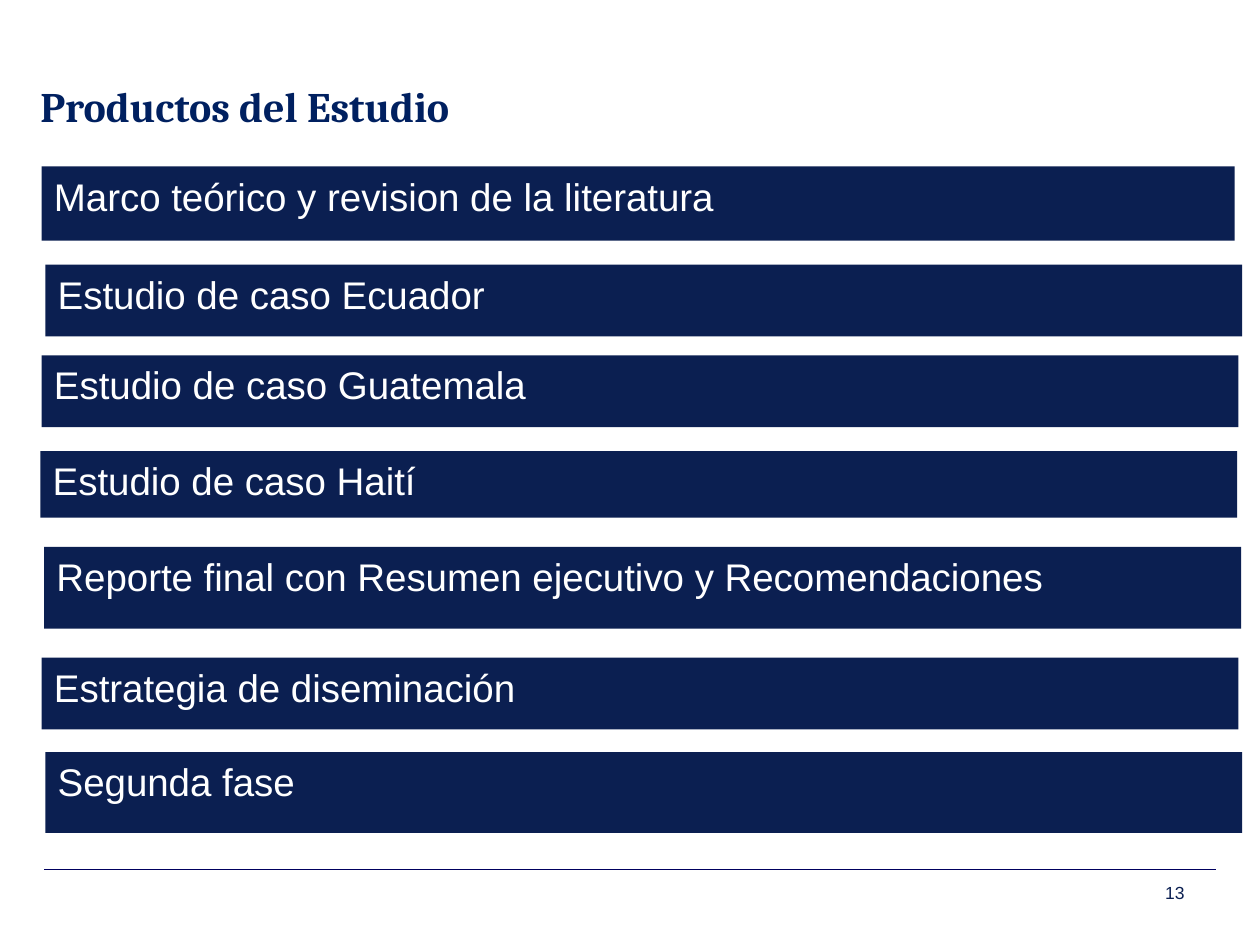
"""Build the slide that lists the products of the study."""
from lxml import etree
from pptx import Presentation
from pptx.dml.color import RGBColor
from pptx.enum.shapes import MSO_CONNECTOR, MSO_SHAPE
from pptx.enum.text import MSO_ANCHOR, PP_ALIGN
from pptx.oxml.ns import qn
from pptx.util import Inches, Pt

STRAIGHT = MSO_CONNECTOR.STRAIGHT
RECTANGLE = MSO_SHAPE.RECTANGLE
TOP, MIDDLE = MSO_ANCHOR.TOP, MSO_ANCHOR.MIDDLE
LEFT, RIGHT = PP_ALIGN.LEFT, PP_ALIGN.RIGHT

COLORS = {"title": "002060", "navy": "0B1F51", "rule": "00005E", "white": "FFFFFF"}
HEADING = "Productos del Estudio"
PAGE_NUMBER = "13"
PRODUCTS = [
    ("Marco teórico y revision de la literatura", (0.33, 1.32, 9.47, 0.59)),
    ("Estudio de caso Ecuador", (0.36, 2.1, 9.5, 0.57)),
    ("Estudio de caso Guatemala", (0.33, 2.82, 9.5, 0.57)),
    ("Estudio de caso Haití", (0.32, 3.58, 9.5, 0.53)),
    ("Reporte final con Resumen ejecutivo y Recomendaciones", (0.35, 4.34, 9.5, 0.65)),
    ("Estrategia de diseminación", (0.33, 5.22, 9.5, 0.57)),
    ("Segunda fase", (0.36, 5.97, 9.5, 0.64)),
]
TITLE_FONT = {"name": "Cambria", "size": Pt(24), "bold": True}
PRODUCT_FONT = {"name": "Arial", "size": Pt(22)}
NUMBER_FONT = {"name": "Arial", "size": Pt(10)}


def inches(*lengths):
    return [Inches(length) for length in lengths]


def write(holder, text, font, color, align=LEFT, anchor=TOP):
    frame = holder.text_frame
    frame.text = text
    frame_format = {
        "word_wrap": True,
        "vertical_anchor": anchor,
        "margin_left": Inches(0.1),
        "margin_right": Inches(0.1),
        "margin_top": Inches(0.05),
        "margin_bottom": Inches(0.05),
    }
    for key, value in frame_format.items():
        setattr(frame, key, value)
    paragraph = frame.paragraphs[0]
    paragraph.alignment = align
    run_font = paragraph.runs[0].font
    for key, value in font.items():
        setattr(run_font, key, value)
    run_font.color.rgb = RGBColor.from_string(COLORS[color])


def add_title(slide):
    title = slide.shapes.title
    places = zip(("left", "top", "width", "height"), inches(0.22, 0.42, 9.15, 0.83))
    for key, value in places:
        setattr(title, key, value)
    write(title, HEADING, TITLE_FONT, "title", anchor=MIDDLE)


def add_product(slide, product, place):
    bar = slide.shapes.add_shape(RECTANGLE, *inches(*place))
    bar.shadow.inherit = False
    bar.fill.solid()
    bar.fill.fore_color.rgb = RGBColor.from_string(COLORS["navy"])
    bar.line.fill.background()
    write(bar, product, PRODUCT_FONT, "white")


def add_footer(slide):
    rule = slide.shapes.add_connector(STRAIGHT, *inches(0.35, 6.9, 9.65, 6.9))
    rule.line.color.rgb = RGBColor.from_string(COLORS["rule"])
    rule.line.width = Pt(1)
    etree.SubElement(rule._element.spPr, qn("a:effectLst"))
    number = slide.shapes.add_textbox(*inches(7.17, 6.95, 2.33, 0.26))
    write(number, PAGE_NUMBER, NUMBER_FONT, "navy", align=RIGHT)


def main():
    deck = Presentation()
    deck.slide_width, deck.slide_height = inches(10, 7.5)
    slide = deck.slides.add_slide(deck.slide_layouts[5])
    add_title(slide)
    add_footer(slide)
    for product, place in PRODUCTS:
        add_product(slide, product, place)
    deck.save("out.pptx")


if __name__ == "__main__":
    main()
